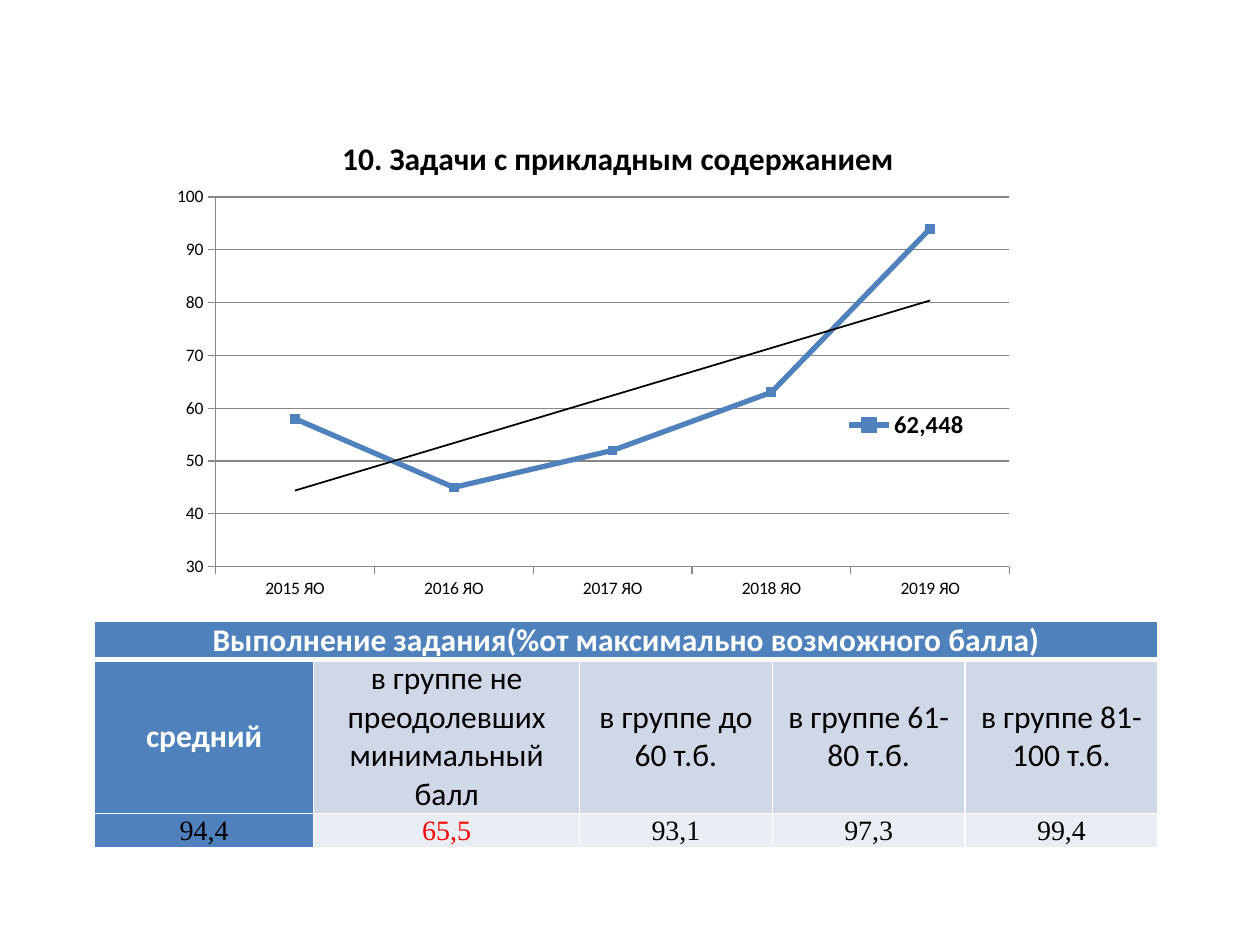
import pptx
import pptx.chart.data
import pptx.dml.color
import pptx.enum.chart
import pptx.enum.text
import pptx.oxml
import pptx.oxml.ns
import pptx.util
from pptx.util import Inches

COLORS = {
    "blue": "4F81BD",
    "label": "D0D8E8",
    "value": "E9EDF4",
    "white": "FFFFFF",
    "black": "000000",
    "red": "FF0000",
    "grid": "878787",
}
YEARS = ["2015 ЯО", "2016 ЯО", "2017 ЯО", "2018 ЯО", "2019 ЯО"]
SCORES = [58, 45, 52, 63, 94]
HEADING = "Выполнение задания(%от максимально возможного балла)"
LABELS = ["средний", "в группе не преодолевших минимальный балл",
          "в группе до 60 т.б.", "в группе 61-80 т.б.", "в группе 81-100 т.б."]
RESULTS = ["94,4", "65,5", "93,1", "97,3", "99,4"]
COL_WIDTHS = [1.74, 2.11, 1.53, 1.53, 1.53]
ROW_HEIGHTS = [0.29, 1.22, 0.27]


def rgb(name):
    return pptx.dml.color.RGBColor.from_string(COLORS[name])


def style_font(font, size, color="black", bold=False, name="Calibri"):
    font.name = name
    font.size = pptx.util.Pt(size)
    font.bold = bold
    font.color.rgb = rgb(color)


def xml(tag, body, prefix="c"):
    """Parse one element of the chart or drawing namespace."""
    ns = pptx.oxml.ns.nsdecls("c", "a")
    return pptx.oxml.parse_xml(f"<{prefix}:{tag} {ns}>{body}</{prefix}:{tag}>")


def set_layout(parent, index, x, y, w=None, h=None, inner=False):
    """Place a chart part at fractions of the chart's size."""
    for old in parent.findall(pptx.oxml.ns.qn("c:layout")):
        parent.remove(old)
    body = '<c:layoutTarget val="inner"/>' if inner else ""
    body += '<c:xMode val="edge"/><c:yMode val="edge"/>'
    for tag, value in zip("xywh", (x, y, w, h)):
        if value is not None:
            body += f'<c:{tag} val="{value}"/>'
    parent.insert(index, xml("layout", f"<c:manualLayout>{body}</c:manualLayout>"))


def style_line(line, color, width):
    line.color.rgb = rgb(color)
    line.width = pptx.util.Pt(width)


def add_trend(series):
    trend = xml("trendline", '<c:spPr><a:ln w="12700"><a:solidFill>'
                f'<a:srgbClr val="{COLORS["black"]}"/></a:solidFill></a:ln></c:spPr>'
                '<c:trendlineType val="linear"/>'
                '<c:dispRSqr val="0"/><c:dispEq val="0"/>')
    series._element.find(pptx.oxml.ns.qn("c:cat")).addprevious(trend)


def style_series(series):
    series.smooth = False
    style_line(series.format.line, "blue", 3)
    marker = series.marker
    marker.style = pptx.enum.chart.XL_MARKER_STYLE.SQUARE
    marker.size = 5
    marker.format.fill.solid()
    marker.format.fill.fore_color.rgb = rgb("blue")
    marker.format.line.color.rgb = rgb("blue")
    add_trend(series)


def style_axes(chart):
    for axis in (chart.category_axis, chart.value_axis):
        axis.major_tick_mark = pptx.enum.chart.XL_TICK_MARK.OUTSIDE
        axis.minor_tick_mark = pptx.enum.chart.XL_TICK_MARK.NONE
        style_line(axis.format.line, "grid", 0.75)
    chart.category_axis.has_major_gridlines = False
    axis = chart.value_axis
    axis.minimum_scale, axis.maximum_scale, axis.major_unit = 30, 100, 10
    axis.has_major_gridlines = True
    style_line(axis.major_gridlines.format.line, "grid", 0.75)


def add_title(chart):
    chart.has_title = True
    title = chart.chart_title
    r = title.text_frame.paragraphs[0].add_run()
    r.text = "10. Задачи с прикладным содержанием"
    style_font(r.font, 18, bold=True)
    set_layout(title._element, 1, 0.2, 0.05)


def add_legend(chart):
    chart.has_legend = True
    legend = chart.legend
    legend.position = pptx.enum.chart.XL_LEGEND_POSITION.RIGHT
    legend.include_in_layout = True
    style_font(legend.font, 14, bold=True)
    # The trend line gets no legend entry
    legend._element.insert(1, xml("legendEntry", '<c:idx val="1"/><c:delete val="1"/>'))
    set_layout(legend._element, 2, 0.79, 0.59, 0.15, 0.08)


def add_score_chart(s):
    data = pptx.chart.data.CategoryChartData(number_format="General")
    data.categories = YEARS
    data.add_series("62,448", SCORES)
    chart = s.shapes.add_chart(
        pptx.enum.chart.XL_CHART_TYPE.LINE_MARKERS,
        Inches(1.3), Inches(0.84), Inches(6.85), Inches(4.02), data).chart
    style_font(chart.font, 10)
    chart.plots[0].vary_by_categories = False
    style_series(chart.plots[0].series[0])
    style_axes(chart)
    add_title(chart)
    add_legend(chart)
    plot_area = chart._chartSpace.chart.plotArea
    set_layout(plot_area, 0, 0.06, 0.18, 0.92, 0.73, inner=True)


def set_borders(cell, bottom=1):
    tc_pr = cell._tc.get_or_add_tcPr()
    for i, (side, width) in enumerate(zip("LRTB", (1, 1, 1, bottom))):
        ln = xml(f"ln{side}", f'<a:solidFill><a:srgbClr val="{COLORS["white"]}"/>'
                 "</a:solidFill>", "a")
        ln.set("w", str(pptx.util.Pt(width)))
        tc_pr.insert(i, ln)


def fill_cell(cell, text, fill, margins, **font):
    cell.fill.solid()
    cell.fill.fore_color.rgb = rgb(fill)
    cell.vertical_anchor = pptx.enum.text.MSO_ANCHOR.MIDDLE
    side, top = margins
    cell.margin_left = cell.margin_right = Inches(side)
    cell.margin_top, cell.margin_bottom = Inches(top), 0
    p = cell.text_frame.paragraphs[0]
    p.alignment = pptx.enum.text.PP_ALIGN.CENTER
    r = p.add_run()
    r.text = text
    style_font(r.font, **font)


def add_result_table(s):
    table = s.shapes.add_table(
        len(ROW_HEIGHTS), len(COL_WIDTHS), Inches(0.75), Inches(4.93),
        Inches(sum(COL_WIDTHS)), Inches(sum(ROW_HEIGHTS))).table
    for col, width in zip(table.columns, COL_WIDTHS):
        col.width = Inches(width)
    for row, height in zip(table.rows, ROW_HEIGHTS):
        row.height = Inches(height)

    heading = table.cell(0, 0)
    heading.merge(table.cell(0, len(COL_WIDTHS) - 1))
    fill_cell(heading, HEADING, "blue", (0.07, 0), size=18, color="white", bold=True)
    for i, (label, result) in enumerate(zip(LABELS, RESULTS)):
        first = i == 0
        fill_cell(table.cell(1, i), label, "blue" if first else "label", (0.07, 0),
                  size=18, color="white" if first else "black", bold=first)
        fill_cell(table.cell(2, i), result, "blue" if first else "value", (0.01, 0.01),
                  size=16, color="red" if i == 1 else "black", name="Times New Roman")
        for row in range(len(ROW_HEIGHTS)):
            set_borders(table.cell(row, i), bottom=3 if row == 0 else 1)


def main():
    prs = pptx.Presentation()
    prs.slide_width, prs.slide_height = Inches(10), Inches(7.5)
    s = prs.slides.add_slide(prs.slide_layouts[6])
    add_result_table(s)
    add_score_chart(s)
    prs.save("out.pptx")


if __name__ == "__main__":
    main()
